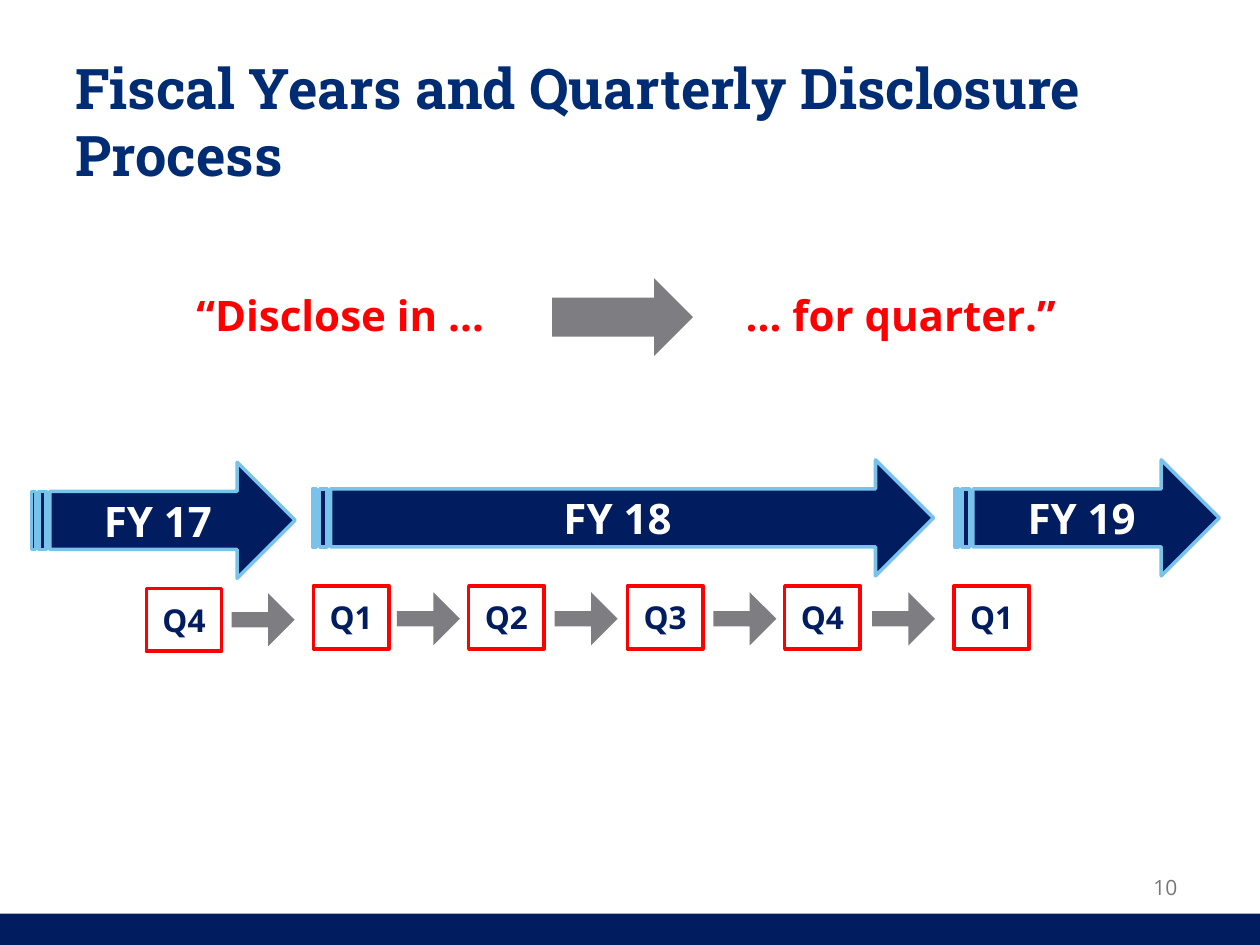
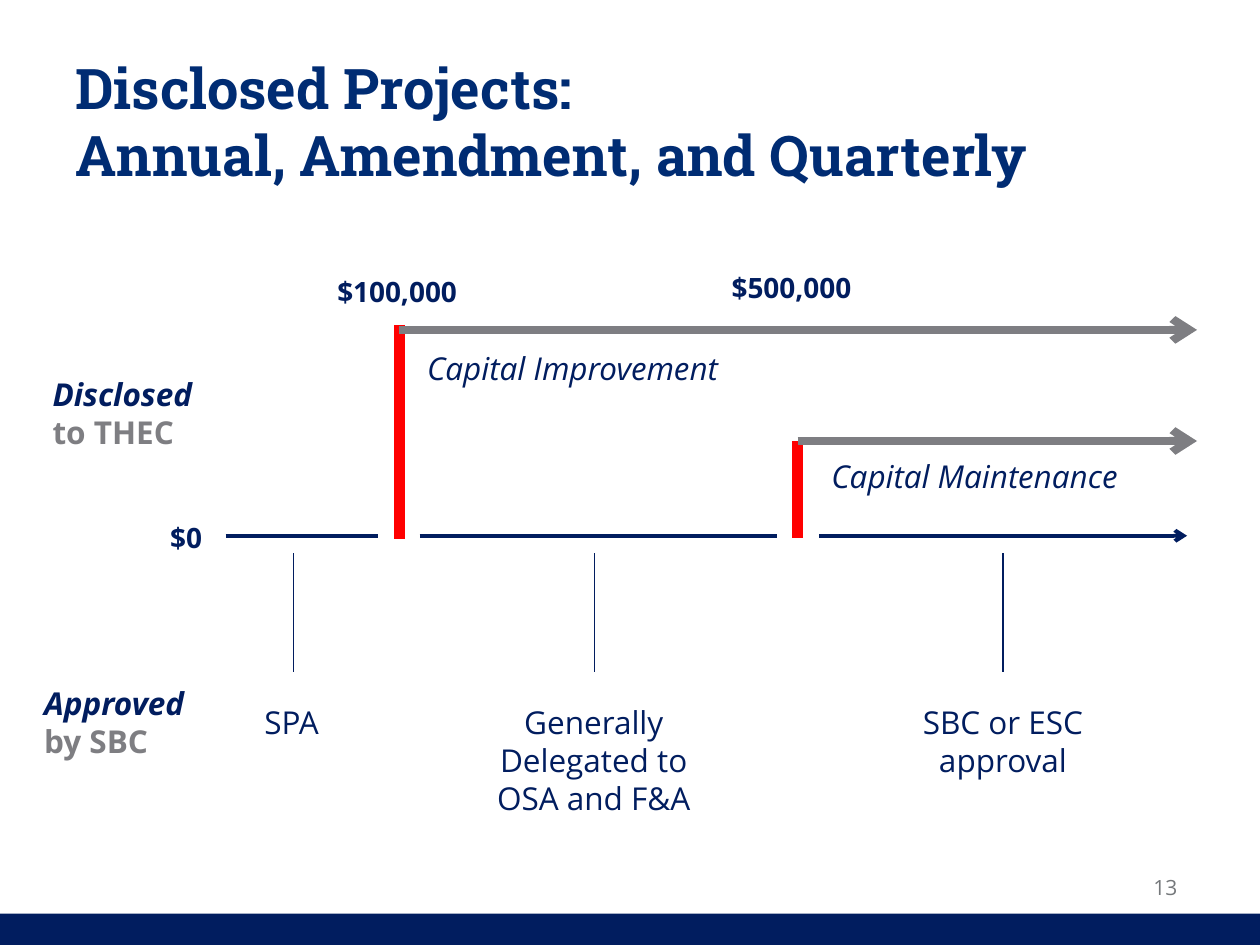
from lxml.etree import SubElement
from pptx import Presentation
from pptx.dml.color import RGBColor
from pptx.enum.shapes import MSO_CONNECTOR, MSO_SHAPE
from pptx.enum.text import MSO_ANCHOR, PP_ALIGN
from pptx.oxml.ns import qn
from pptx.util import Cm, Pt

NAVY = RGBColor(0x01, 0x1D, 0x5F)
TITLE_BLUE = RGBColor(0x00, 0x2C, 0x73)
SKY = RGBColor(0x79, 0xC2, 0xEC)
RED = RGBColor(0xFF, 0x00, 0x00)
GRAY = RGBColor(0x7E, 0x7E, 0x82)
NUMBER_GRAY = RGBColor(0x75, 0x78, 0x7B)
WHITE = RGBColor(0xFF, 0xFF, 0xFF)
BODY_FONT = "Open Sans"
TITLE_FONT = "Roboto Slab"


def write_text(shape, text, size=18, color=NAVY, bold=False, italic=False,
               font=BODY_FONT, align=PP_ALIGN.LEFT, anchor=MSO_ANCHOR.TOP):
    frame = shape.text_frame
    frame.word_wrap = True
    frame.vertical_anchor = anchor
    paragraph = frame.paragraphs[0]
    paragraph.alignment = align
    for index, line in enumerate(text.split("\n")):
        if index:
            paragraph.add_line_break()
        run = paragraph.add_run()
        run.text = line
        run.font.name = font
        run.font.size = Pt(size)
        run.font.bold = bold
        run.font.italic = italic
        run.font.color.rgb = color


def add_block(slide, kind, left, top, width, height, fill=None, line=None):
    shape = slide.shapes.add_shape(kind, Cm(left), Cm(top), Cm(width), Cm(height))
    shape.shadow.inherit = False
    if fill is None:
        shape.fill.background()
    else:
        shape.fill.solid()
        shape.fill.fore_color.rgb = fill
    if line is None:
        shape.line.fill.background()
    else:
        shape.line.color.rgb = line
        shape.line.width = Pt(2)
    return shape


presentation = Presentation()
presentation.slide_width = Cm(25.4)
presentation.slide_height = Cm(19.05)

slides = []
for title, number in [
    ("Fiscal Years and Quarterly Disclosure Process", "10"),
    ("Disclosed Projects:\nAnnual, Amendment, and Quarterly", "13"),
]:
    slide = presentation.slides.add_slide(presentation.slide_layouts[6])
    number_box = slide.shapes.add_textbox(Cm(22.86), Cm(17.35), Cm(1.27), Cm(1.07))
    write_text(number_box, number, size=12, color=NUMBER_GRAY,
               align=PP_ALIGN.CENTER, anchor=MSO_ANCHOR.MIDDLE)
    add_block(slide, MSO_SHAPE.RECTANGLE, 0, 18.42, 25.4, 0.63, fill=NAVY)
    title_box = slide.shapes.add_textbox(Cm(1.27), Cm(0.84), Cm(22.86), Cm(3.18))
    write_text(title_box, title, size=32, color=TITLE_BLUE, bold=True,
               font=TITLE_FONT, anchor=MSO_ANCHOR.MIDDLE)
    slides.append(slide)
process_slide, projects_slide = slides

for text, left, width in [("“Disclose in …", 3.71, 7.37), ("… for quarter.”", 14.78, 7.85)]:
    phrase_box = process_slide.shapes.add_textbox(Cm(left), Cm(5.72), Cm(width), Cm(1.27))
    write_text(phrase_box, text, size=24, color=RED, bold=True)
add_block(process_slide, MSO_SHAPE.RIGHT_ARROW, 11.13, 5.61, 2.84, 1.57, fill=GRAY)

for text, left, top, width in [
    ("FY 17", 0.64, 9.32, 5.31),
    ("FY 18", 6.3, 9.27, 12.52),
    ("FY 19", 19.25, 9.27, 5.33),
]:
    year_arrow = add_block(process_slide, MSO_SHAPE.STRIPED_RIGHT_ARROW,
                           left, top, width, 2.34, fill=NAVY, line=SKY)
    write_text(year_arrow, text, size=24, color=WHITE, bold=True,
               align=PP_ALIGN.CENTER, anchor=MSO_ANCHOR.MIDDLE)

for text, left, top in [
    ("Q4", 2.95, 11.86),
    ("Q1", 6.32, 11.81),
    ("Q2", 9.45, 11.81),
    ("Q3", 12.65, 11.81),
    ("Q4", 15.82, 11.81),
    ("Q1", 19.23, 11.81),
]:
    quarter_box = add_block(process_slide, MSO_SHAPE.RECTANGLE,
                            left, top, 1.52, 1.27, line=RED)
    write_text(quarter_box, text, bold=True,
               align=PP_ALIGN.CENTER, anchor=MSO_ANCHOR.MIDDLE)

for left, top in [(4.67, 11.96), (8, 11.94), (11.18, 11.94), (14.38, 11.94), (17.58, 11.94)]:
    quarter_arrow = add_block(process_slide, MSO_SHAPE.RIGHT_ARROW,
                              left, top, 1.27, 1.07, fill=GRAY)
    quarter_arrow.adjustments[0] = 0.29

thresholds = [(8.05, 6.55, 10.87, RED, 6, False), (16.08, 8.89, 10.85, RED, 6, False)]
stems = [(x, 11.15, 13.54, NAVY, 0.75, False) for x in (5.92, 11.99, 20.22)]
vertical_lines = [(x, top, x, bottom, *style) for x, top, bottom, *style in thresholds + stems]
horizontal_lines = [(left, y, right, y, *style) for left, right, y, *style in [
    (4.55, 7.62, 10.8, NAVY, 2.25, False),
    (8.46, 15.67, 10.8, NAVY, 2.25, False),
    (16.51, 23.93, 10.8, NAVY, 2.25, True),
    (8.05, 24.13, 6.65, GRAY, 4.5, True),
    (16.08, 24.13, 8.89, GRAY, 4.5, True),
]]
for start_x, start_y, end_x, end_y, color, width, has_arrow in vertical_lines + horizontal_lines:
    connector = projects_slide.shapes.add_connector(
        MSO_CONNECTOR.STRAIGHT, Cm(start_x), Cm(start_y), Cm(end_x), Cm(end_y))
    connector.line.color.rgb = color
    connector.line.width = Pt(width)
    if has_arrow:
        SubElement(connector.line._get_or_add_ln(), qn("a:tailEnd"), type="arrow")
    SubElement(connector._element.spPr, qn("a:effectLst"))

for action, recipient, left, top, width in [
    ("Disclosed", " to THEC", 0.81, 7.44, 3.73),
    ("Approved", " by SBC", 0.64, 13.67, 4.01),
]:
    row_label = projects_slide.shapes.add_textbox(Cm(left), Cm(top), Cm(width), Cm(1.8))
    write_text(row_label, action, bold=True, italic=True)
    write_text(row_label, recipient, color=GRAY, bold=True)

amount = {"size": 16, "bold": True}
category = {"italic": True}
approval = {"align": PP_ALIGN.CENTER}
for text, left, top, width, height, style in [
    ("$0", 3.18, 10.36, 1.37, 0.94, amount),
    ("$100,000", 6.55, 5.41, 3.2, 0.94, amount),
    ("$500,000", 14.5, 5.33, 3.2, 0.94, amount),
    ("Capital Improvement", 8.36, 6.91, 8.6, 1.02, category),
    ("Capital Maintenance", 16.51, 9.09, 8.6, 1.02, category),
    ("SPA", 5.08, 14.05, 1.83, 1.02, {}),
    ("Generally Delegated to OSA and F&A", 9.53, 14.05, 4.88, 2.57, approval),
    ("SBC or ESC approval", 17.78, 14.05, 4.88, 1.8, approval),
]:
    label = projects_slide.shapes.add_textbox(Cm(left), Cm(top), Cm(width), Cm(height))
    write_text(label, text, **style)

presentation.save("out.pptx")
